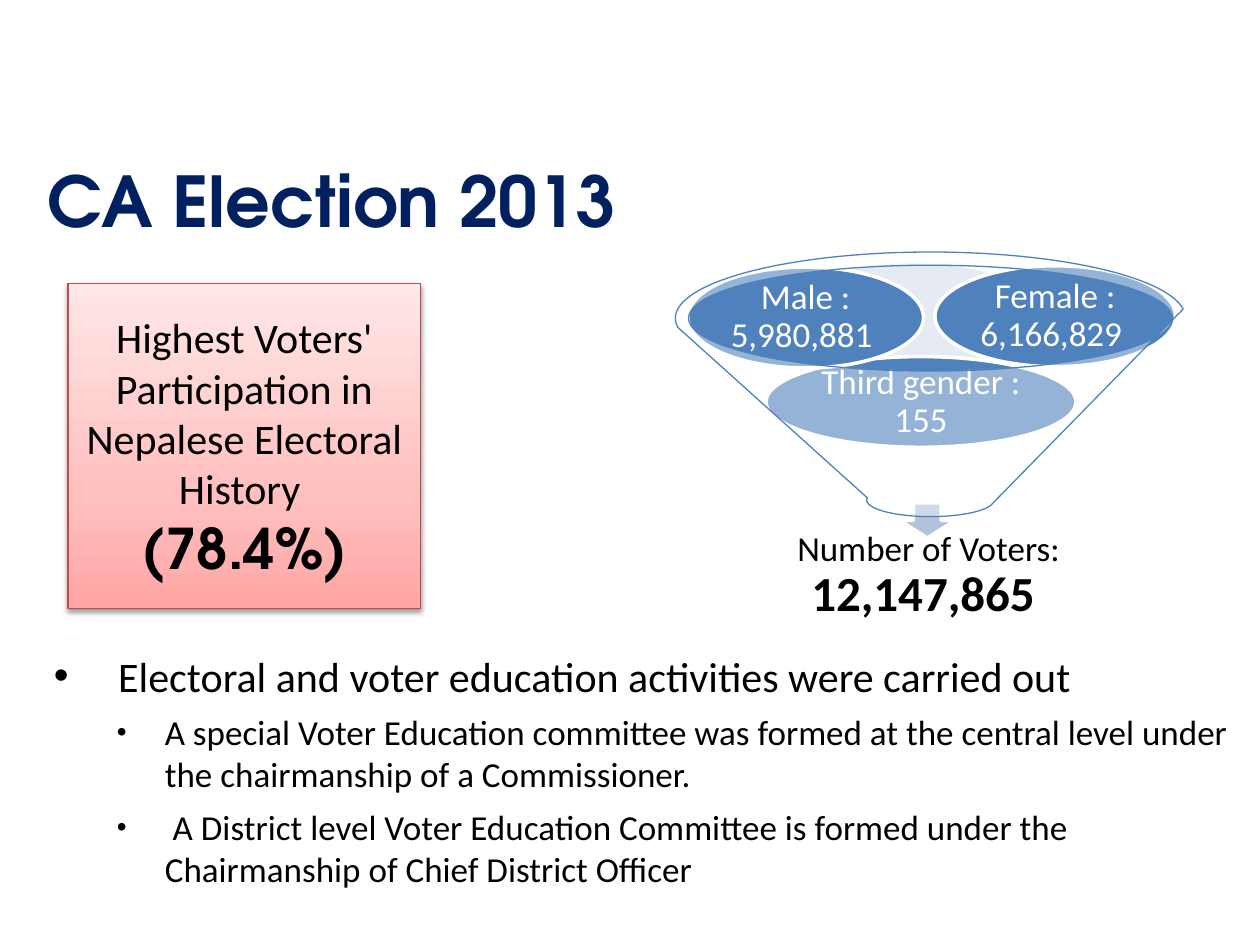
from dataclasses import dataclass

from lxml.etree import SubElement
from pptx import Presentation
from pptx.dml.color import RGBColor
from pptx.enum.shapes import MSO_SHAPE as SHAPE
from pptx.enum.text import MSO_ANCHOR as ANCHOR, PP_ALIGN as ALIGN
from pptx.oxml.ns import qn
from pptx.util import Emu, Inches, Pt

COLORS = {
    "navy": "002060", "black": "000000", "white": "FFFFFF", "blue": "4F81BD",
    "mist": "C2CDE1", "arrow": "B3C1DB", "red": "BF4C48",
    "rose": "FFA6A5", "pink": "FFC0BF", "blush": "FFE7E7",
}
BODY, DISPLAY = "Calibri", "TeX Gyre Adventor"


@dataclass(frozen=True)
class Box:
    """A place given in percent of the slide's width and height."""
    x: float
    y: float
    w: float
    h: float

    def emu(self, prs) -> list:
        return [Emu(round(share * side / 100)) for share, side in zip(
            (self.x, self.y, self.w, self.h),
            (prs.slide_width, prs.slide_height) * 2)]


@dataclass(frozen=True)
class Voters:
    """One group of voters in the funnel."""
    label: str
    box: Box


@dataclass(frozen=True)
class Bullet:
    """One bulleted line with its indents in inches."""
    text: str
    size: int
    left: float
    hang: float
    mark: int = 100
    before: int = 6


GROUPS = [
    Voters("Third gender : 155", Box(60.8, 37.73, 24.6, 9.6)),
    Voters("Male : 5,980,881 ", Box(54.6, 28.27, 18.7, 10.67)),
    Voters("Female : 6,166,829 ", Box(74.2, 28.13, 19.1, 10.67)),
]
BULLETS = [
    Bullet("Electoral and voter education activities were carried out",
           24, 0.51, 0.51, before=0),
    Bullet("A special Voter Education committee was formed at the central level "
           "under the chairmanship of a Commissioner.", 20, 0.88, 0.38, 80),
    Bullet(" A District level Voter Education Committee is formed under the "
           "Chairmanship of Chief District Officer", 20, 0.88, 0.38, 80),
]


def rgb(name: str) -> RGBColor:
    return RGBColor.from_string(COLORS[name])


def node(parent, tag: str, **attrs):
    return SubElement(parent, qn(tag), {k: str(v) for k, v in attrs.items()})


def write(p, text: str, size=20, font=BODY, color="black", bold=False) -> None:
    r = p.add_run()
    r.text = text
    r.font.size, r.font.name, r.font.bold = Pt(size), font, bold
    r.font.color.rgb = rgb(color)


def frame(sp, inset=None, anchor=ANCHOR.MIDDLE, align=ALIGN.CENTER, spacing=None):
    tf = sp.text_frame
    tf.word_wrap, tf.vertical_anchor = True, anchor
    if inset is not None:
        tf.margin_left = tf.margin_right = Inches(inset)
        tf.margin_top = tf.margin_bottom = Inches(inset)
    p = tf.paragraphs[0]
    p.alignment, p.line_spacing = align, spacing
    return p


def draw(prs, s, kind, box: Box, fill: str, line=None, width=2.0, opacity=100):
    sp = s.shapes.add_shape(kind, *box.emu(prs))
    sp.shadow.inherit = False
    sp.fill.solid()
    sp.fill.fore_color.rgb = rgb(fill)
    if opacity < 100:
        color = sp.fill._xPr.find(qn("a:solidFill"))[0]
        node(color, "a:alpha", val=opacity * 1000)
    if line:
        sp.line.color.rgb, sp.line.width = rgb(line), Pt(width)
    else:
        sp.line.fill.background()
    return sp


def add_title(prs, s) -> None:
    title = s.shapes.title
    title.left, title.top, title.width, title.height = Box(2.8, 15.6, 90, 11.07).emu(prs)
    write(frame(title, align=ALIGN.LEFT), "CA Election 2013", size=40,
          font=DISPLAY, color="navy", bold=True)


def add_bullets(prs, s) -> None:
    tf = s.shapes.add_textbox(*Box(3.3, 68.13, 95.8, 28).emu(prs)).text_frame
    tf.word_wrap = True
    for i, item in enumerate(BULLETS):
        p = tf.add_paragraph() if i else tf.paragraphs[0]
        p.level = int(i > 0)
        if item.before:
            p.space_before = Pt(item.before)
        ppr = p._p.get_or_add_pPr()
        ppr.set("marL", str(Inches(item.left)))
        ppr.set("indent", str(-Inches(item.hang)))
        node(ppr, "a:buSzPct", val=item.mark * 1000)
        node(ppr, "a:buFont", typeface="Arial")
        node(ppr, "a:buChar", char="•")
        write(p, item.text, size=item.size)


def add_funnel(prs, s) -> None:
    draw(prs, s, SHAPE.OVAL, Box(61.1, 27.87, 22.8, 14), "mist", opacity=40)
    draw(prs, s, SHAPE.DOWN_ARROW, Box(71.4, 53.2, 4.4, 3.73), "arrow", "white")
    total = s.shapes.add_textbox(*Box(60.9, 57.47, 25.6, 7.07).emu(prs))
    p = frame(total, inset=0.16, spacing=0.9)
    write(p, "Number of Voters: ")
    write(p, "12,147,865 ", size=28, bold=True)
    for group in GROUPS:
        oval = draw(prs, s, SHAPE.OVAL, group.box, "blue", "white")
        write(frame(oval, inset=0.03, spacing=0.9), group.label, color="white")
    draw(prs, s, SHAPE.FUNNEL, Box(53.6, 26.67, 40.5, 28), "white", "blue", 0.75, 40)


def add_turnout(prs, s) -> None:
    sp = draw(prs, s, SHAPE.RECTANGLE, Box(5.4, 30, 28, 34.4), "pink", "red", 0.75)
    sp.fill.gradient()
    sp.fill.gradient_angle = 90
    stops = sp._element.spPr.find(qn("a:gradFill")).find(qn("a:gsLst"))
    for stop in list(stops):
        stops.remove(stop)
    for share, name in ((0, "rose"), (35, "pink"), (100, "blush")):
        node(node(stops, "a:gs", pos=share * 1000), "a:srgbClr", val=COLORS[name])
    shadow = node(sp._element.spPr.find(qn("a:effectLst")), "a:outerShdw",
                  blurRad=Pt(3.1), dist=Pt(1.6), dir=90 * 60000, rotWithShape=0)
    node(node(shadow, "a:srgbClr", val=COLORS["black"]), "a:alpha", val=38000)
    p = frame(sp)
    write(p, "Highest Voters' Participation in Nepalese Electoral History ", size=24)
    p.add_line_break()
    write(p, "(78.4%)", size=32, font=DISPLAY, bold=True)


def main() -> None:
    """Build the election slide and save it."""
    prs = Presentation()
    prs.slide_width, prs.slide_height = Inches(10), Inches(7.5)
    s = prs.slides.add_slide(prs.slide_layouts[5])
    for add in (add_title, add_bullets, add_funnel, add_turnout):
        add(prs, s)
    prs.save("out.pptx")


if __name__ == "__main__":
    main()
